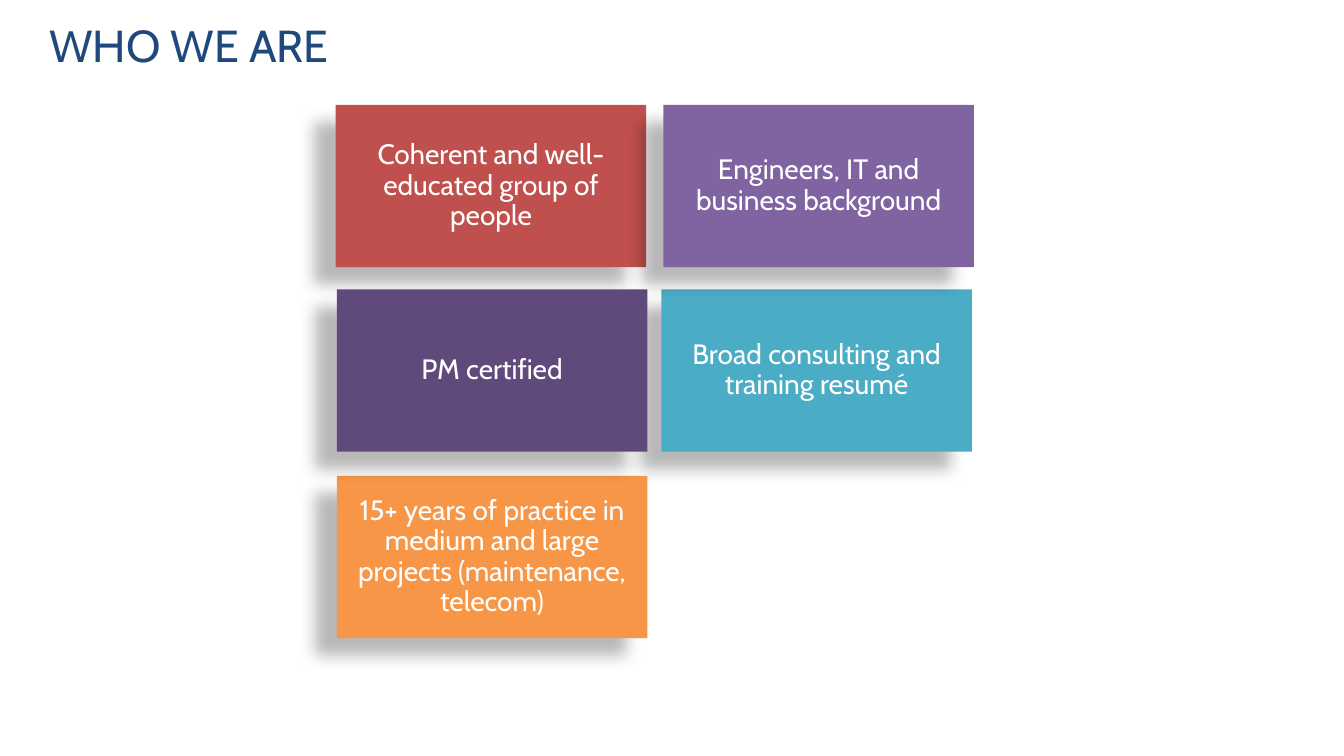
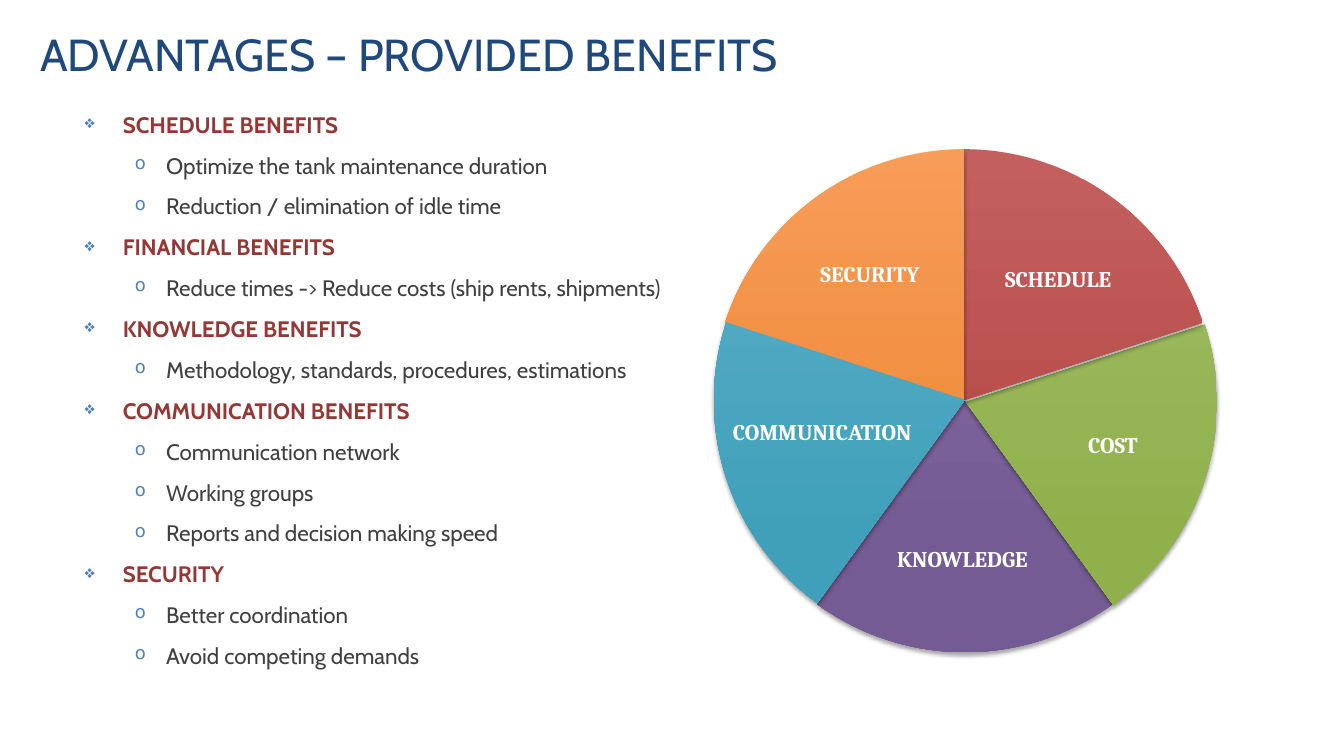
import pptx
import pptx.dml.color
import pptx.enum.shapes
import pptx.enum.text
import pptx.oxml
import pptx.oxml.ns
import pptx.util
from pptx.util import Inches

COLORS = {
    "title": "1F497D", "heading": "953735", "body": "404040", "bullet": "4F81BD",
    "white": "FFFFFF", "black": "000000", "red": "C0504D", "purple": "8064A2",
    "violet": "604A7B", "teal": "4BACC6", "orange": "F79646",
}
GRADIENTS = {
    "purple": ("8870A7", "755B94"), "green": ("A1BE67", "90B04C"),
    "red": ("C3605E", "B34644"), "orange": ("F79C59", "EF8833"),
    "teal": ("5DB0C9", "40A0BA"),
}
TILE_SIZE = (3.08, 1.61)
TILES = [  # text, colour, left, top
    ("Coherent and well-educated group of people", "red", 3.33, 1.04),
    ("Broad consulting and training resumé", "teal", 6.56, 2.87),
    ("15+ years of practice in medium and large projects (maintenance, telecom)",
     "orange", 3.34, 4.72),
    ("PM certified", "violet", 3.34, 2.87),
    ("Engineers, IT and business background", "purple", 6.58, 1.04),
]
BENEFITS = {
    "SCHEDULE BENEFITS": ["Optimize the tank maintenance duration",
                          "Reduction / elimination of idle time"],
    "FINANCIAL BENEFITS": ["Reduce times -> Reduce costs (ship rents, shipments)"],
    "KNOWLEDGE BENEFITS": ["Methodology, standards, procedures, estimations"],
    "COMMUNICATION BENEFITS": ["Communication network", "Working groups",
                               "Reports and decision making speed"],
    "SECURITY": ["Better coordination", "Avoid competing demands"],
}
WHEEL_SIZE = 4.98
SLICE_ANGLE = 72
SLICES = [  # label, colour, start angle, wheel left and top, label place
    ("KNOWLEDGE", "purple", 54, (7.08, 1.49), (8.68, 5.22, 1.73, 0.67)),
    ("COST", "green", 342, (7.09, 1.5), (10.41, 4.07, 1.26, 0.71)),
    ("SCHEDULE", "red", 270, (7.07, 1.48), (9.7, 2.48, 1.59, 0.61)),
    ("SECURITY", "orange", 198, (7.07, 1.48), (7.93, 2.39, 1.4, 0.69)),
    ("COMMUNICATION", "teal", 126, (7.08, 1.48), (7.09, 3.97, 2.13, 0.66)),
]


def rgb(value):
    return pptx.dml.color.RGBColor.from_string(value)


def add_xml(parent, tag, **attributes):
    element = pptx.oxml.parse_xml(f"<a:{tag} {pptx.oxml.ns.nsdecls('a')}/>")
    for name, value in attributes.items():
        element.set(name, str(value))
    parent.append(element)
    return element


class Deck:
    font = "Cabin"
    label_font = "Cambria"

    def __init__(self):
        self.file = pptx.Presentation()
        self.file.slide_width = Inches(13.33)
        self.file.slide_height = Inches(7.5)
        self.page = None

    def add_page(self):
        self.page = self.file.slides.add_slide(self.file.slide_layouts[6])

    def add_text(self, para, text, size=16, color="white", bold=False, font=None,
                 centered=False, line_spacing=None):
        """Put formatted text into a paragraph."""
        if centered:
            para.alignment = pptx.enum.text.PP_ALIGN.CENTER
        if line_spacing:
            para.line_spacing = line_spacing
        span = para.add_run()
        span.text = text
        span.font.size = pptx.util.Pt(size)
        span.font.name = font or self.font
        span.font.bold = bold
        span.font.color.rgb = rgb(COLORS[color])

    def frame(self, shape, inset=None, middle=True):
        """Prepare the text frame of a shape and return it."""
        frame = shape.text_frame
        frame.word_wrap = True
        anchors = pptx.enum.text.MSO_ANCHOR
        frame.vertical_anchor = anchors.MIDDLE if middle else anchors.TOP
        if inset is not None:
            frame.margin_left = frame.margin_right = Inches(inset)
            frame.margin_top = frame.margin_bottom = Inches(inset)
        return frame

    def text_box(self, place, **options):
        box = self.page.shapes.add_textbox(*map(Inches, place))
        return self.frame(box, **options)

    def title(self, text, place, middle=True):
        frame = self.text_box(place, middle=middle)
        self.add_text(frame.paragraphs[0], text, size=32, color="title")

    def shape(self, kind, place, opacity, blur, distance, angle):
        """Add a shape without outline that casts a soft shadow."""
        shape = self.page.shapes.add_shape(kind, *map(Inches, place))
        shape.line.fill.background()
        shape.shadow.inherit = False
        effects = shape._element.spPr.find(pptx.oxml.ns.qn("a:effectLst"))
        shadow = add_xml(effects, "outerShdw", blurRad=pptx.util.Pt(blur),
                         dist=pptx.util.Pt(distance), dir=angle * 60000,
                         algn="ctr", rotWithShape=0)
        color = add_xml(shadow, "srgbClr", val=COLORS["black"])
        add_xml(color, "alpha", val=opacity * 1000)
        return shape

    def tile(self, text, color, left, top):
        tile = self.shape(pptx.enum.shapes.MSO_SHAPE.RECTANGLE,
                          (left, top, *TILE_SIZE), 28, 11.8, 19.7, 141)
        tile.fill.solid()
        tile.fill.fore_color.rgb = rgb(COLORS[color])
        self.add_text(self.frame(tile, inset=0.08).paragraphs[0], text, size=20,
                      centered=True, line_spacing=0.9)

    def slice(self, label, color, start, corner, label_place):
        piece = self.shape(pptx.enum.shapes.MSO_SHAPE.PIE,
                           (*corner, WHEEL_SIZE, WHEEL_SIZE), 35, 3, 2, 90)
        end = (start + SLICE_ANGLE) % 360
        for index, angle in enumerate((start, end)):
            piece.adjustments[index] = angle * 0.6
        piece.fill.gradient()
        piece.fill.gradient_angle = 270
        stops = piece.fill.gradient_stops
        for stop, position, value in zip(stops, (0, 0.78), GRADIENTS[color]):
            stop.position = position
            stop.color.rgb = rgb(value)
        frame = self.text_box(label_place, inset=0.02)
        self.add_text(frame.paragraphs[0], label, bold=True, font=self.label_font,
                      centered=True, line_spacing=0.9)

    def bullet(self, para, mark, left, hanging):
        properties = para._p.get_or_add_pPr()
        properties.set("marL", str(Inches(left)))
        properties.set("indent", str(-Inches(hanging)))
        color = add_xml(properties, "buClr")
        add_xml(color, "srgbClr", val=COLORS["bullet"])
        add_xml(properties, "buSzPct", val=80000)
        add_xml(properties, "buChar", char=mark)

    def outline(self, groups, place):
        """Add a two-level bulleted list from headings and their items."""
        frame = self.text_box(place, middle=False)
        lines = [(text, text == heading) for heading, items in groups.items()
                 for text in (heading, *items)]
        for index, (text, is_heading) in enumerate(lines):
            para = frame.add_paragraph() if index else frame.paragraphs[0]
            if index:
                para.space_before = pptx.util.Pt(10)
            if is_heading:
                self.bullet(para, "❖", 0.38, 0.38)
                self.add_text(para, text, color="heading", bold=True)
            else:
                para.level = 1
                self.bullet(para, "o", 0.81, 0.31)
                self.add_text(para, text, color="body")


def main():
    deck = Deck()

    deck.add_page()
    deck.title("WHO WE ARE", (0.39, 0.13, 9.4, 0.89), middle=False)
    for tile in TILES:
        deck.tile(*tile)

    deck.add_page()
    deck.title("ADVANTAGES – PROVIDED BENEFITS", (0.3, 0.12, 9.4, 0.82))
    deck.outline(BENEFITS, (0.74, 1.05, 6.2, 5.8))
    for piece in SLICES:
        deck.slice(*piece)

    deck.file.save("out.pptx")


if __name__ == "__main__":
    main()
